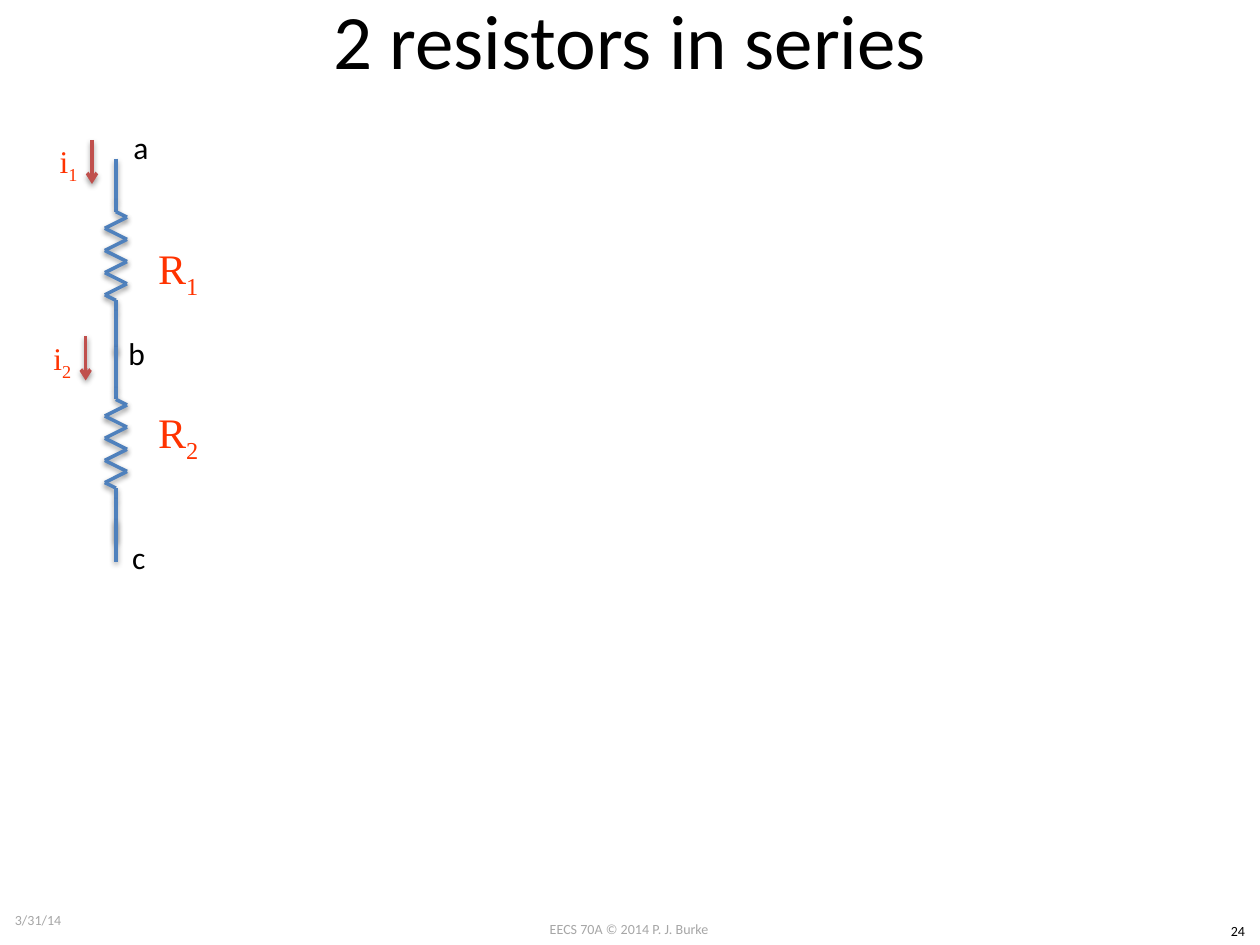
import itertools

import lxml.etree
import pptx
import pptx.dml.color
import pptx.enum.shapes
import pptx.enum.text
import pptx.oxml
import pptx.oxml.ns
import pptx.util

BLACK = pptx.dml.color.RGBColor(0x00, 0x00, 0x00)
GREY = pptx.dml.color.RGBColor(0xA6, 0xA6, 0xA6)
ORANGE = pptx.dml.color.RGBColor(0xFF, 0x33, 0x00)
BLUE = pptx.dml.color.RGBColor(0x4F, 0x81, 0xBD)
RED = pptx.dml.color.RGBColor(0xC0, 0x50, 0x4D)

LEFT = pptx.enum.text.PP_ALIGN.LEFT
CENTER = pptx.enum.text.PP_ALIGN.CENTER
TOP = pptx.enum.text.MSO_ANCHOR.TOP
MIDDLE = pptx.enum.text.MSO_ANCHOR.MIDDLE

SHADOW = (
    f"<a:effectLst {pptx.oxml.ns.nsdecls('a')}>"
    '<a:outerShdw blurRad="40000" dist="20000" dir="5400000" rotWithShape="0">'
    '<a:srgbClr val="000000"><a:alpha val="38000"/></a:srgbClr>'
    "</a:outerShdw></a:effectLst>"
)


class CircuitSlide:
    """Draws circuit elements on a slide divided into 100 columns and 75 rows."""

    columns, rows = 100, 75
    wire_column = 9.2
    zigzag_step = 0.88
    formats = {
        "title": {"name": "Calibri", "size": pptx.util.Pt(44), "color": BLACK},
        "node": {"name": "Calibri", "size": pptx.util.Pt(18), "color": BLACK},
        "resistance": {"name": "Times New Roman", "size": pptx.util.Pt(24), "color": ORANGE},
        "current": {"name": "Times New Roman", "size": pptx.util.Pt(18), "color": ORANGE},
        "footer": {"name": "Calibri", "size": pptx.util.Pt(8), "color": GREY},
        "number": {"name": "Calibri", "size": pptx.util.Pt(8), "color": BLACK},
    }

    def __init__(self, presentation):
        self.presentation = presentation
        self.slide = presentation.slides.add_slide(presentation.slide_layouts[6])

    def x(self, column):
        return round(self.presentation.slide_width * column / self.columns)

    def y(self, row):
        return round(self.presentation.slide_height * row / self.rows)

    def text(self, kind, box, text, subscript="", align=CENTER, anchor=MIDDLE, wrap=True):
        left, top, width, height = box
        shape = self.slide.shapes.add_textbox(
            self.x(left), self.y(top), self.x(width), self.y(height)
        )
        frame = shape.text_frame
        for name, value in {"word_wrap": wrap, "vertical_anchor": anchor}.items():
            setattr(frame, name, value)
        paragraph = frame.paragraphs[0]
        paragraph.alignment = align
        for part, baseline in ((text, None), (subscript, "-25000")):
            if not part:
                continue
            run = paragraph.add_run()
            run.text = part
            for name, value in self.formats[kind].items():
                if name == "color":
                    run.font.color.rgb = value
                else:
                    setattr(run.font, name, value)
            if baseline:
                run._r.get_or_add_rPr().set("baseline", baseline)

    def line(self, start, end, color=BLUE, arrow=False, shapes=None):
        shapes = self.slide.shapes if shapes is None else shapes
        connector = shapes.add_connector(
            pptx.enum.shapes.MSO_CONNECTOR.STRAIGHT,
            self.x(start[0]), self.y(start[1]), self.x(end[0]), self.y(end[1]),
        )
        connector.line.color.rgb = color
        connector.line.width = pptx.util.Pt(2)
        if arrow:
            outline = connector.line._get_or_add_ln()
            lxml.etree.SubElement(outline, pptx.oxml.ns.qn("a:tailEnd"), type="arrow")
        connector._element.spPr.append(pptx.oxml.parse_xml(SHADOW))

    def resistor(self, top):
        middle, step = self.wire_column, self.zigzag_step
        start = top + 4.2
        end = start + 8 * step
        points = [(middle, top), (middle, top + 3.3), (middle, start)]
        for index in range(8):
            side = 0.88 if index % 2 == 0 else -0.88
            points.append((middle + side, start + (index + 0.5) * step))
        points += [(middle, end), (middle, end + step), (middle, end + 4.2)]
        group = self.slide.shapes.add_group_shape()
        for first, second in itertools.pairwise(points):
            self.line(first, second, shapes=group.shapes)

    def current(self, column, row, subscript):
        self.line((column, row), (column, row + 3.5), RED, arrow=True)
        self.text("current", (column - 6.5, row - 0.7, 9.3, 5.2), "i", subscript)

    def node(self, column, row, name):
        self.text("node", (column, row, 3.2, 4), name, align=LEFT, anchor=TOP, wrap=False)


def main():
    presentation = pptx.Presentation()
    presentation.slide_width = pptx.util.Inches(10)
    presentation.slide_height = pptx.util.Inches(7.5)
    circuit = CircuitSlide(presentation)

    circuit.text("footer", (38.3, 72.6, 23.3, 2.4), "EECS 70A © 2014 P. J. Burke", anchor=TOP)
    circuit.text("number", (96.5, 72.7, 3.5, 2.4), "24", anchor=TOP)
    circuit.text("title", (5, -3.2, 90, 12.5), "2 resistors in series")

    for top in (12.6, 27.5):
        circuit.resistor(top)
    circuit.line((circuit.wire_column, 41.3), (circuit.wire_column, 44.6))

    for subscript, row in (("1", 17.9), ("2", 30.9)):
        circuit.text("resistance", (8.2, row, 11.9, 7.3), "R", subscript)
    for name, column, row in (("a", 9.6, 9.7), ("b", 9.2, 26), ("c", 9.5, 42.2)):
        circuit.node(column, row, name)
    for subscript, column, row in (("1", 7.3, 11.1), ("2", 6.8, 26.7)):
        circuit.current(column, row, subscript)

    circuit.text("footer", (0.2, 71, 23.3, 4), "3/31/14", align=LEFT)
    presentation.save("out.pptx")


if __name__ == "__main__":
    main()
